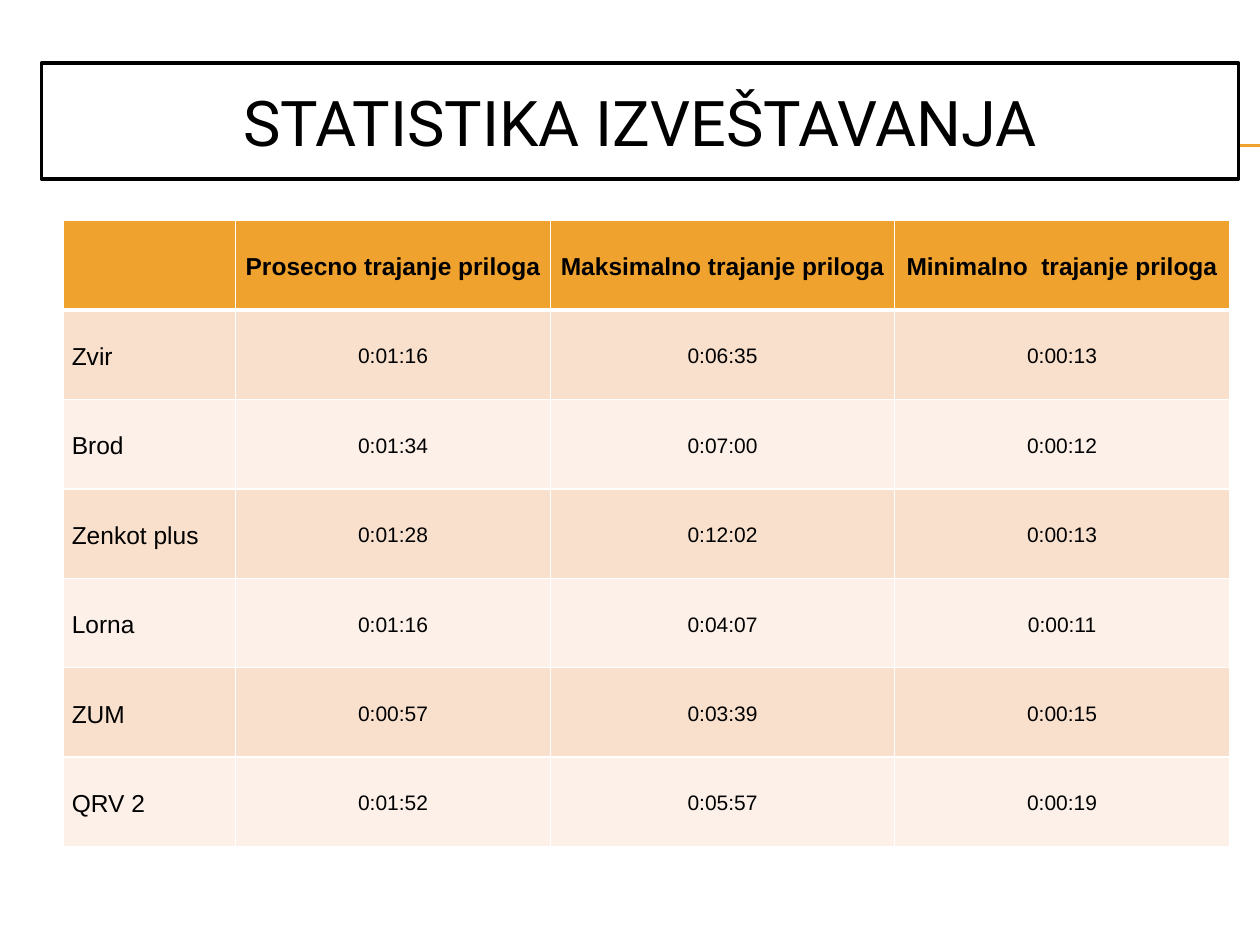
from lxml.etree import SubElement
from pptx import Presentation
from pptx.dml.color import RGBColor
from pptx.enum.shapes import MSO_CONNECTOR
from pptx.enum.text import MSO_ANCHOR, PP_ALIGN
from pptx.oxml.ns import qn
from pptx.util import Inches, Pt

COLORS = {
    "black": "000000",
    "white": "FFFFFF",
    "orange": "F0A22E",
    "peach": "F9E0CD",
    "cream": "FCF0E8",
}
COLUMN_WIDTHS = [1.37, 2.5, 2.73, 2.66]
ROW_HEIGHT = 0.71
ROWS = [
    ["", "Prosecno trajanje priloga", "Maksimalno trajanje priloga", "Minimalno  trajanje priloga"],
    ["Zvir", "0:01:16", "0:06:35", "0:00:13"],
    ["Brod", "0:01:34", "0:07:00", "0:00:12"],
    ["Zenkot plus", "0:01:28", "0:12:02", "0:00:13"],
    ["Lorna", "0:01:16", "0:04:07", "0:00:11"],
    ["ZUM", "0:00:57", "0:03:39", "0:00:15"],
    ["QRV 2", "0:01:52", "0:05:57", "0:00:19"],
]


def color(name):
    return RGBColor.from_string(COLORS[name])


def style_text(paragraph, font_name, size, bold=False, alignment=PP_ALIGN.CENTER):
    paragraph.alignment = alignment
    for run in paragraph.runs:
        run.font.name = font_name
        run.font.size = Pt(size)
        run.font.bold = bold
        run.font.color.rgb = color("black")


def add_rule(slide, y):
    rule = slide.shapes.add_connector(
        MSO_CONNECTOR.STRAIGHT, Inches(0.56), Inches(y), Inches(10), Inches(y)
    )
    rule.line.color.rgb = color("orange")
    rule.line.width = Pt(0.75)
    SubElement(rule._element.spPr, qn("a:effectLst"))


def add_title(slide, text):
    title = slide.shapes.title
    slide.shapes._spTree.append(title._element)
    title.left, title.top = Inches(0.33), Inches(0.5)
    title.width, title.height = Inches(9.5), Inches(0.92)
    title.fill.solid()
    title.fill.fore_color.rgb = color("white")
    title.line.color.rgb = color("black")
    title.line.width = Pt(2)
    SubElement(title.line._get_or_add_ln(), qn("a:round"))
    title.text_frame.text = text
    title.text_frame.vertical_anchor = MSO_ANCHOR.MIDDLE
    style_text(title.text_frame.paragraphs[0], "Roboto", 36)


def set_borders(cell, row):
    widths = {"L": 1, "R": 1, "T": 3 if row == 1 else 1, "B": 3 if row == 0 else 1}
    properties = cell._tc.get_or_add_tcPr()
    for side, width in widths.items():
        border = SubElement(properties, qn(f"a:ln{side}"), w=str(Pt(width)))
        fill = SubElement(border, qn("a:solidFill"))
        SubElement(fill, qn("a:srgbClr"), val=COLORS["white"])


def format_cell(cell, text, row, column):
    set_borders(cell, row)
    cell.fill.solid()
    fill_name = "orange" if row == 0 else "peach" if row % 2 else "cream"
    cell.fill.fore_color.rgb = color(fill_name)
    cell.vertical_anchor = MSO_ANCHOR.MIDDLE
    cell.margin_left = cell.margin_right = Inches(0.07)
    cell.margin_top = cell.margin_bottom = 0
    cell.text_frame.text = text
    paragraph = cell.text_frame.paragraphs[0]
    paragraph.line_spacing = 1.15
    size = 14 if row == 0 or column == 0 else 12
    alignment = PP_ALIGN.LEFT if column == 0 else PP_ALIGN.CENTER
    style_text(paragraph, "Arial", size, row == 0, alignment)


def add_statistics_table(slide):
    table = slide.shapes.add_table(
        len(ROWS), len(COLUMN_WIDTHS), Inches(0.5), Inches(1.75),
        Inches(sum(COLUMN_WIDTHS)), Inches(ROW_HEIGHT * len(ROWS)),
    ).table
    for column, width in zip(table.columns, COLUMN_WIDTHS):
        column.width = Inches(width)
    for row_index, values in enumerate(ROWS):
        table.rows[row_index].height = Inches(ROW_HEIGHT)
        for column_index, text in enumerate(values):
            format_cell(table.cell(row_index, column_index), text, row_index, column_index)


def main():
    presentation = Presentation()
    presentation.slide_width = Inches(10)
    presentation.slide_height = Inches(7.5)
    slide = presentation.slides.add_slide(presentation.slide_layouts[5])
    slide.background.fill.solid()
    slide.background.fill.fore_color.rgb = color("white")
    for y in (1.15, 1.16):
        add_rule(slide, y)
    add_title(slide, "STATISTIKA IZVEŠTAVANJA")
    add_statistics_table(slide)
    presentation.save("out.pptx")


if __name__ == "__main__":
    main()
